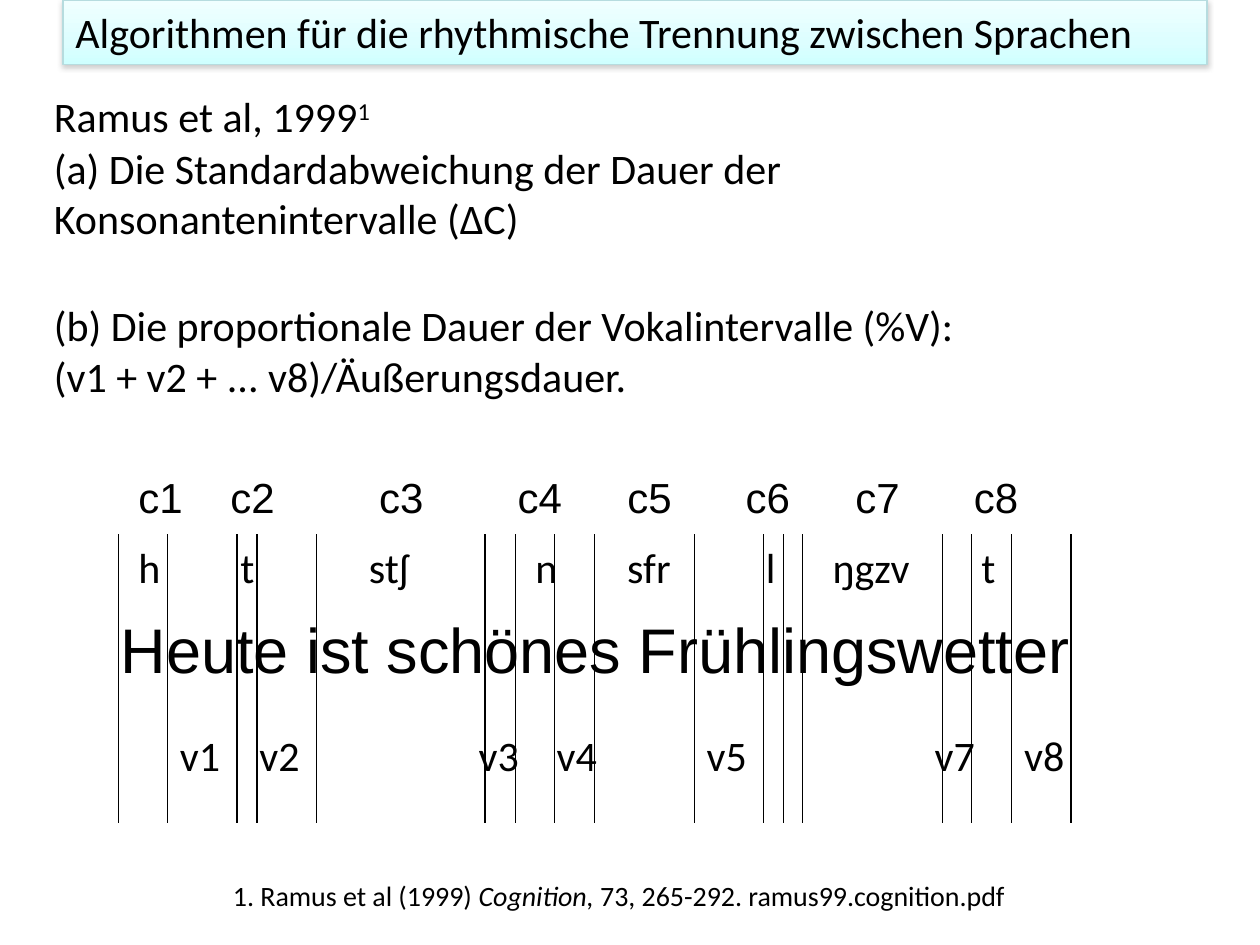
from dataclasses import dataclass

from lxml.etree import SubElement
from pptx import Presentation
from pptx.dml.color import RGBColor
from pptx.enum.shapes import MSO_CONNECTOR as Connector, MSO_SHAPE as Shape
from pptx.enum.text import MSO_ANCHOR as Anchor, MSO_AUTO_SIZE as AutoSize, PP_ALIGN as Align
from pptx.oxml import parse_xml
from pptx.oxml.ns import nsdecls, qn
from pptx.util import Inches, Pt


@dataclass(frozen=True)
class Theme:
    """Colours, fonts and type sizes of the slide."""
    ink: str = "000000"
    banner_stops: tuple = ((0, "F0FFFF"), (65, "DDFEFF"), (100, "CFFFFF"))
    banner_line: str = "B6DCDF"
    shadow: str = "808080"
    body_font: str = "Calibri"
    label_font: str = "Arial"
    body: int = 24
    sentence: int = 36
    note: int = 16
    hairline: float = 0.75


@dataclass(frozen=True)
class Box:
    """A region in inches."""
    left: float
    top: float
    width: float
    height: float

    def inside(self, left, top, width, height):
        """Return a box placed relative to this one."""
        return Box(self.left + left, self.top + top, width, height)

    def lengths(self):
        """Return left, top, width and height as lengths."""
        return [Inches(value) for value in (self.left, self.top, self.width, self.height)]


THEME = Theme()

CONSONANTS = {"c1": 0.14, "c2": 0.87, "c3": 2.05, "c4": 3.15,
              "c5": 4.02, "c6": 4.96, "c7": 5.83, "c8": 6.77}
SOUNDS = (("h", 0.14, 0.39), ("t", 0.95, 0.31), ("stʃ", 1.97, 0.55), ("n", 3.29, 0.39),
          ("sfr", 4.02, 0.57), ("l", 5.12, 0.28), ("ŋgzv", 5.65, 0.82), ("t", 6.83, 0.31))
VOWELS = {"v1": 0.47, "v2": 1.1, "v3": 2.84, "v4": 3.46, "v5": 4.65, "v7": 6.46, "v8": 7.17}
BOUNDARIES = (0.08, 0.47, 1.02, 1.18, 1.65, 2.99, 3.23, 3.54, 3.86,
              4.65, 5.2, 5.36, 5.51, 6.62, 6.85, 7.17, 7.64)


def write(frame, paragraphs, size=THEME.body, font=THEME.body_font, wrap=True):
    """Fill a text frame with paragraphs of (text, style) runs."""
    settings = {"word_wrap": wrap, "auto_size": AutoSize.SHAPE_TO_FIT_TEXT,
                "vertical_anchor": Anchor.TOP}
    for name, value in settings.items():
        setattr(frame, name, value)
    for index, runs in enumerate(paragraphs):
        para = frame.add_paragraph() if index else frame.paragraphs[0]
        para.alignment = Align.LEFT
        for text, style in runs:
            span = para.add_run()
            span.text = text
            span.font.color.rgb = RGBColor.from_string(THEME.ink)
            for name, value in {"name": font, "size": Pt(size), "italic": style == "italic"}.items():
                setattr(span.font, name, value)
            if style == "superscript":
                span.font._element.set("baseline", "30000")


def add_text(page, box, paragraphs, **options):
    """Place a text box."""
    write(page.shapes.add_textbox(*box.lengths()).text_frame, paragraphs, **options)


def add_banner(page, box, title):
    """Draw the shaded title bar with its gradient and soft shadow."""
    banner = page.shapes.add_shape(Shape.RECTANGLE, *box.lengths())
    banner.line.color.rgb = RGBColor.from_string(THEME.banner_line)
    banner.line.width = Pt(THEME.hairline)
    stops = "".join(f'<a:gs pos="{place * 1000}"><a:srgbClr val="{colour}"/></a:gs>'
                    for place, colour in THEME.banner_stops)
    properties = banner._element.spPr
    properties.find(qn("a:prstGeom")).addnext(parse_xml(
        f'<a:gradFill {nsdecls("a")} rotWithShape="1"><a:gsLst>{stops}</a:gsLst>'
        '<a:lin ang="5400000" scaled="0"/></a:gradFill>'))
    properties.append(parse_xml(
        f'<a:effectLst {nsdecls("a")}><a:outerShdw blurRad="{Pt(3.1)}" dist="{Pt(1.6)}" '
        f'dir="5400000" rotWithShape="0"><a:srgbClr val="{THEME.shadow}">'
        '<a:alpha val="38000"/></a:srgbClr></a:outerShdw></a:effectLst>'))
    write(banner.text_frame, [[(title, None)]])


def add_measures(page, box):
    """List the source and the two rhythm measures."""
    add_text(page, box.inside(0, 0, 4.83, 0.51),
             [[("Ramus et al, 1999", None), ("1", "superscript")]])
    add_text(page, box.inside(0, 0.41, 7.5, 0.91),
             [[("(a) Die Standardabweichung der Dauer der Konsonantenintervalle (ΔC)", None)]])
    add_text(page, box.inside(0, 1.66, 8.33, 0.91),
             [[("(b) Die proportionale Dauer der Vokalintervalle (%V):", None)],
              [("(v1 + v2 + ... v8)/Äußerungsdauer.", None)]])


def add_boundaries(page, box):
    """Draw the grouped interval boundaries over the height of the box."""
    group = page.shapes.add_group_shape()
    for offset in BOUNDARIES:
        x = Inches(box.left + offset)
        rule = group.shapes.add_connector(Connector.STRAIGHT, x, Inches(box.top),
                                          x, Inches(box.top + box.height))
        rule.line.color.rgb = RGBColor.from_string(THEME.ink)
        rule.line.width = Pt(THEME.hairline)
        SubElement(rule._element.spPr, qn("a:effectLst"))


def add_labels(page, box, labels, **options):
    """Place a row of (text, offset, width) labels."""
    for text, offset, width in labels:
        add_text(page, box.inside(offset, 0, width, box.height),
                 [[(text, None)]], wrap=False, **options)


def add_segmentation(page, box):
    """Show the sentence cut into consonant and vowel intervals."""
    add_text(page, box.inside(0, 1.11, 7.73, 0.7), [[("Heute ist schönes Frühlingswetter", None)]],
             size=THEME.sentence, font=THEME.label_font, wrap=False)
    add_boundaries(page, box.inside(0, 0.55, box.width, 2.29))
    add_labels(page, box.inside(0, 0, box.width, 0.5),
               [(text, offset, 0.55) for text, offset in CONSONANTS.items()],
               font=THEME.label_font)
    add_labels(page, box.inside(0, 0.56, box.width, 0.51), SOUNDS)
    add_labels(page, box.inside(0, 2.05, box.width, 0.51),
               [(text, offset, 0.52) for text, offset in VOWELS.items()])


def add_reference(page, box):
    """Place the literature note."""
    add_text(page, box, [[("1. Ramus et al (1999) ", None), ("Cognition,", "italic"),
                          (" 73, 265-292. ramus99.cognition.pdf", None)]], size=THEME.note)


def main():
    """Build and save the deck."""
    deck = Presentation()
    deck.slide_width, deck.slide_height = Inches(10), Inches(7.5)
    page = deck.slides.add_slide(deck.slide_layouts[6])
    add_banner(page, Box(0.5, 0, 9.08, 0.51),
               "Algorithmen für die rhythmische Trennung zwischen Sprachen")
    add_measures(page, Box(0.33, 0.67, 8.33, 2.57))
    add_segmentation(page, Box(0.86, 3.69, 7.73, 2.84))
    add_reference(page, Box(1.75, 6.92, 7.08, 0.37))
    deck.save("out.pptx")


if __name__ == "__main__":
    main()
